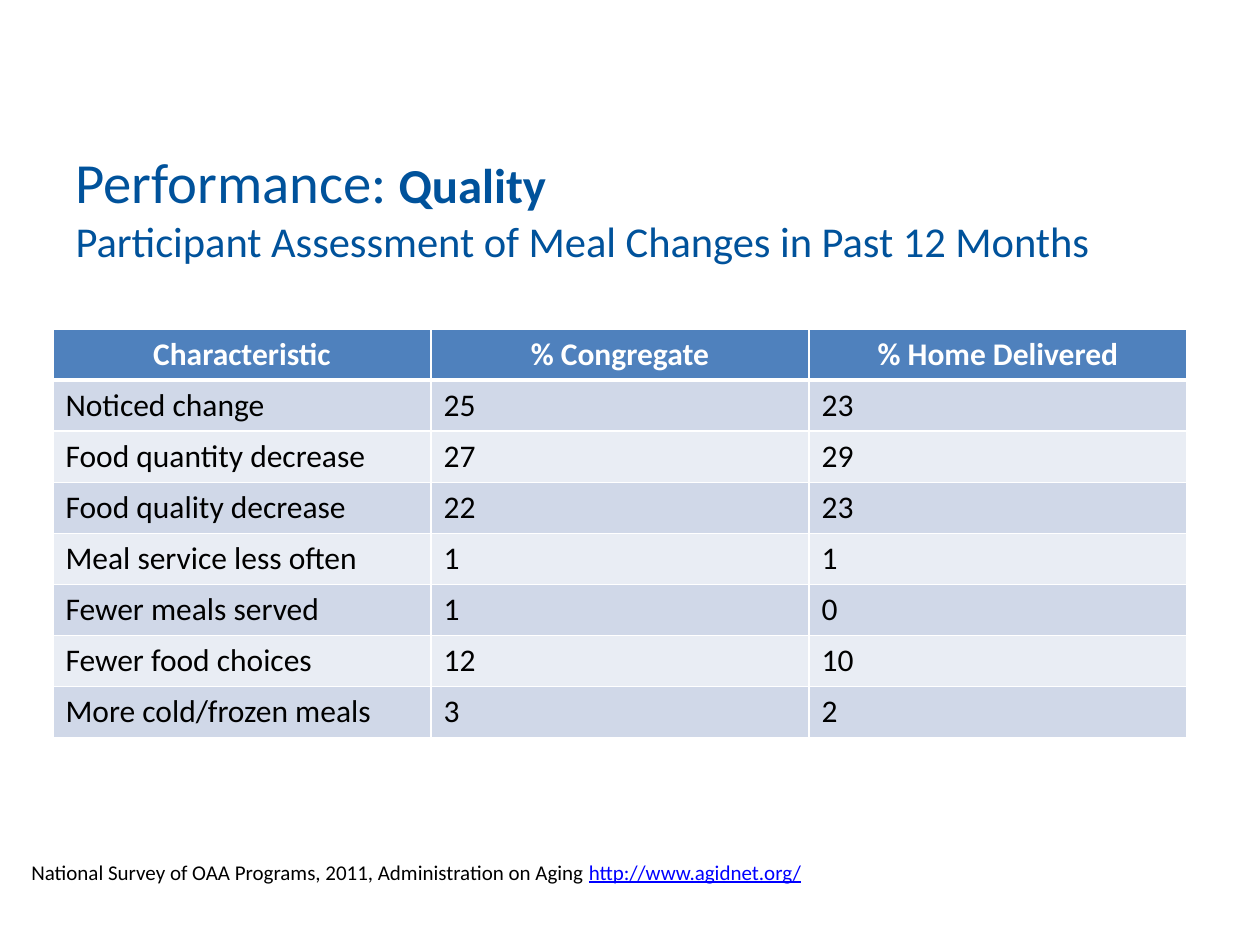
import pptx
import pptx.dml.color
import pptx.enum.text
import pptx.oxml
import pptx.oxml.ns
import pptx.util

RGBColor = pptx.dml.color.RGBColor
NAVY = RGBColor(0x00, 0x52, 0x9B)
HEADER = RGBColor(0x4F, 0x81, 0xBD)
BAND_DARK = RGBColor(0xD0, 0xD8, 0xE8)
BAND_LIGHT = RGBColor(0xE9, 0xED, 0xF4)
LINK = RGBColor(0x00, 0x00, 0xFF)
BLACK = RGBColor(0x00, 0x00, 0x00)
WHITE = RGBColor(0xFF, 0xFF, 0xFF)

ROWS = [
    ("Characteristic", "% Congregate", "% Home Delivered"),
    ("Noticed change", "25", "23"),
    ("Food quantity decrease", "27", "29"),
    ("Food quality decrease", "22", "23"),
    ("Meal service less often", "1", "1"),
    ("Fewer meals served", "1", "0"),
    ("Fewer food choices", "12", "10"),
    ("More cold/frozen meals", "3", "2"),
]


def px(length):
    return pptx.util.Emu(round(length * 914400 / 126))


class SlideWriter:
    font = "Calibri"

    def __init__(self, page):
        self.page = page

    def span(self, para, text, size, color, bold=False, underline=False):
        span = para.add_run()
        span.text = text
        span.font.name = self.font
        span.font.size = pptx.util.Pt(size)
        span.font.color.rgb = color
        span.font.bold = bold
        span.font.underline = underline

    def title(self, left, top, width, height, lines):
        box = self.page.shapes.title
        box.left, box.top, box.width, box.height = map(px, (left, top, width, height))
        frame = box.text_frame
        frame.auto_size = pptx.enum.text.MSO_AUTO_SIZE.NONE
        frame.vertical_anchor = pptx.enum.text.MSO_ANCHOR.MIDDLE
        frame.margin_bottom = px(37)
        para = frame.paragraphs[0]
        para.alignment = pptx.enum.text.PP_ALIGN.LEFT
        for index, spans in enumerate(lines):
            if index:
                self.line_break(para, spans[0][1])
            for text, size, bold in spans:
                self.span(para, text, size, NAVY, bold)

    def line_break(self, para, size):
        para.add_line_break()
        mark = para._p.findall(pptx.oxml.ns.qn("a:br"))[-1]
        mark.append(pptx.oxml.parse_xml(
            f'<a:rPr {pptx.oxml.ns.nsdecls("a")} sz="{round(size * 100)}"/>'))

    def table(self, left, top, column_width, row_height, rows):
        columns = len(rows[0])
        frame = self.page.shapes.add_table(
            len(rows), columns, px(left), px(top),
            px(column_width * columns), px(row_height * len(rows)))
        grid = frame.table
        for column in grid.columns:
            column.width = px(column_width)
        for row in grid.rows:
            row.height = px(row_height)
        for row_index, values in enumerate(rows):
            for column_index, text in enumerate(values):
                self.cell(grid.cell(row_index, column_index), text, row_index)

    def cell(self, cell, text, row_index):
        is_header = row_index == 0
        widths = {"L": 1, "R": 1, "T": 3 if row_index == 1 else 1, "B": 3 if is_header else 1}
        for side, width in widths.items():
            self.border(cell, side, width)
        cell.fill.solid()
        cell.fill.fore_color.rgb = HEADER if is_header else BAND_DARK if row_index % 2 else BAND_LIGHT
        para = cell.text_frame.paragraphs[0]
        if is_header:
            para.alignment = pptx.enum.text.PP_ALIGN.CENTER
        self.span(para, text, 18, WHITE if is_header else BLACK, is_header)

    def border(self, cell, side, width):
        cell._tc.get_or_add_tcPr().append(pptx.oxml.parse_xml(
            f'<a:ln{side} {pptx.oxml.ns.nsdecls("a")} w="{pptx.util.Pt(width)}">'
            f'<a:solidFill><a:srgbClr val="{WHITE}"/></a:solidFill></a:ln{side}>'))

    def note(self, left, top, width, height, spans):
        box = self.page.shapes.add_textbox(*map(px, (left, top, width, height)))
        box.text_frame.word_wrap = False
        para = box.text_frame.paragraphs[0]
        for text, color, underline in spans:
            self.span(para, text, 12, color, underline=underline)


def main():
    deck = pptx.Presentation()
    deck.slide_width, deck.slide_height = px(1260), px(945)
    writer = SlideWriter(deck.slides.add_slide(deck.slide_layouts[5]))
    writer.title(63, 135, 1124, 174, [
        [("Performance:", 32.4, False), (" ", 28.8, False), ("Quality", 27.9, True)],
        [("Participant Assessment of Meal Changes in Past 12 Months", 24.3, False)],
    ])
    writer.table(53, 329, 378, 51, ROWS)
    writer.note(19, 853, 809, 63, [
        ("National Survey of OAA Programs, 2011, Administration on Aging ", BLACK, False),
        ("http://www.agidnet.org/", LINK, True),
    ])
    deck.save("out.pptx")


if __name__ == "__main__":
    main()
